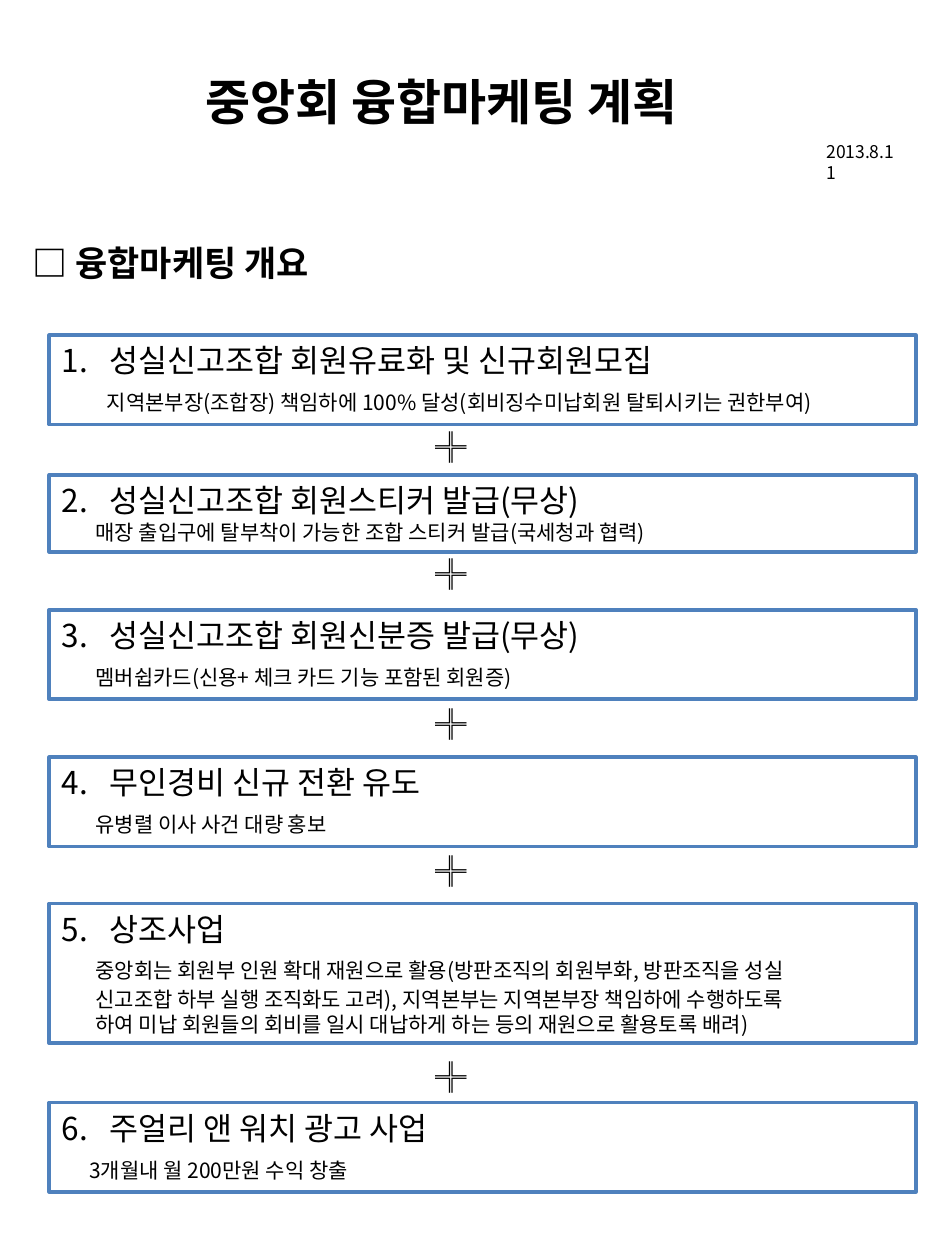
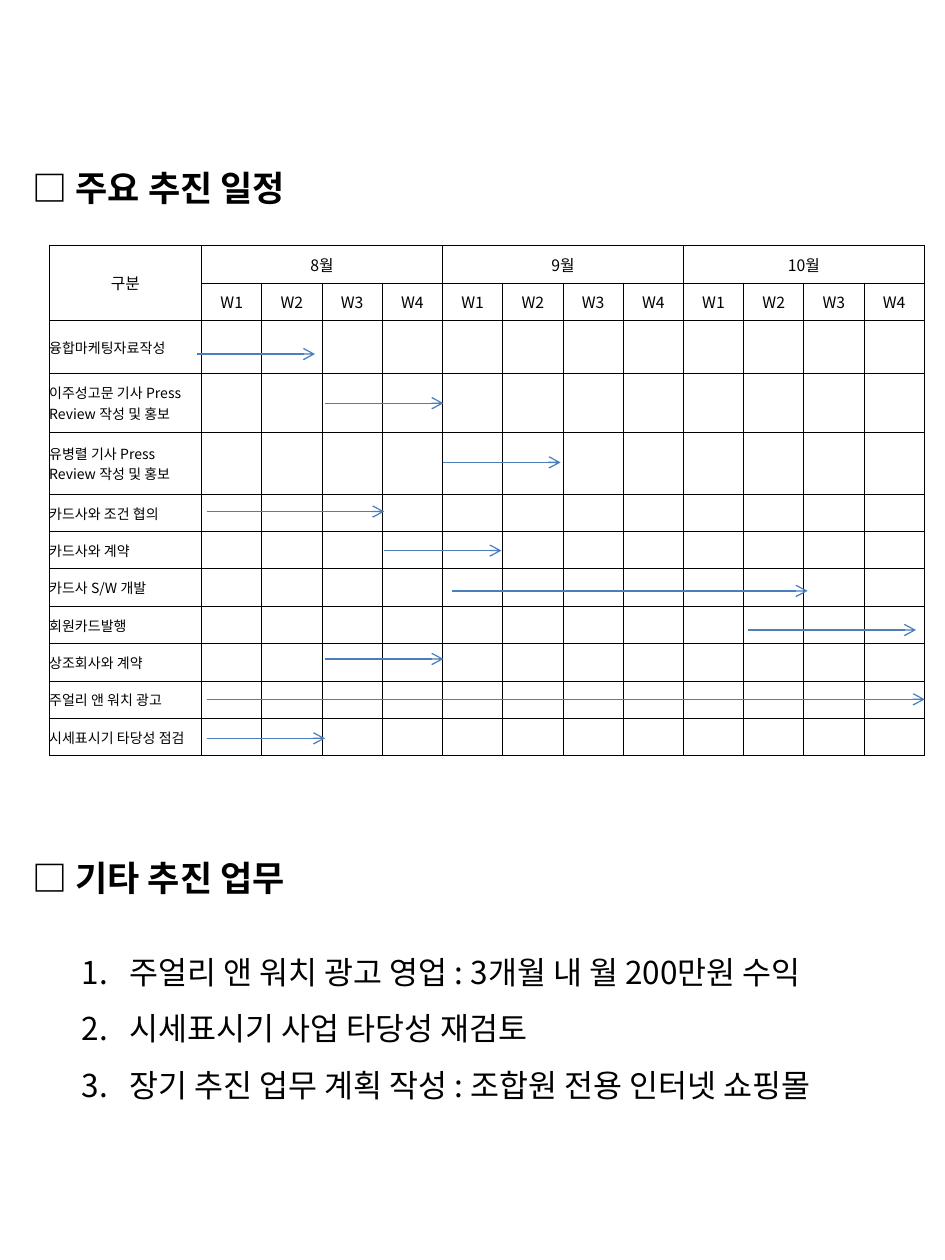
from dataclasses import dataclass

from lxml import etree
from pptx import Presentation
from pptx import util as u
from pptx.dml.color import RGBColor
from pptx.enum import shapes, text
from pptx.oxml.ns import qn


@dataclass(frozen=True)
class Theme:
    font: str = "Noto Sans CJK KR"
    ink: str = "000000"
    paper: str = "FFFFFF"
    frame: str = "4F81BD"
    arrow: str = "4B7EBC"
    title: int = 28
    heading: int = 20
    item: int = 18
    detail: int = 12
    date: int = 10
    table_head: int = 9
    table_body: int = 8


T = Theme()
HANG = 0.38

PLANS = [
    (2.66, 0.71, "성실신고조합 회원유료화 및 신규회원모집", 0.36, 6,
     ["지역본부장(조합장) 책임하에 100% 달성(회비징수미납회원 탈퇴시키는 권한부여)"]),
    (3.77, 0.61, "성실신고조합 회원스티커 발급(무상)", 0.27, 0,
     ["매장 출입구에 탈부착이 가능한 조합 스티커 발급(국세청과 협력)"]),
    (4.84, 0.71, "성실신고조합 회원신분증 발급(무상)", 0.27, 6,
     ["멤버쉽카드(신용+ 체크 카드 기능 포함된 회원증)"]),
    (6.01, 0.71, "무인경비 신규 전환 유도", 0.27, 6,
     ["유병렬 이사 사건 대량 홍보"]),
    (7.17, 1.11, "상조사업", 0.27, 6,
     ["중앙회는 회원부 인원 확대 재원으로 활용(방판조직의 회원부화, 방판조직을 성실",
      "신고조합 하부 실행 조직화도 고려), 지역본부는 지역본부장 책임하에 수행하도록",
      "하여 미납 회원들의 회비를 일시 대납하게 하는 등의 재원으로 활용토록 배려)"]),
    (8.75, 0.71, "주얼리 앤 워치 광고 사업", 0.22, 6,
     ["3개월내 월 200만원 수익 창출"]),
]
PLUS_TOPS = [3.35, 4.36, 5.55, 6.71, 8.35]

MONTHS = ["8월", "9월", "10월"]
WEEKS = ["W1", "W2", "W3", "W4"]
TASKS = [
    ("융합마케팅자료작성", 1.17, 2.11, 0.86),
    ("이주성고문 기사 Press Review 작성 및 홍보", 2.19, 3.13, 1.25),
    ("유병렬 기사 Press Review 작성 및 홍보", 3.13, 4.06, 1.72),
    ("카드사와 조건 협의", 1.25, 2.66, 2.11),
    ("카드사와 계약", 2.66, 3.59, 2.42),
    ("카드사 S/W 개발", 3.2, 6.02, 2.74),
    ("회원카드발행", 5.55, 6.88, 3.05),
    ("상조회사와 계약", 2.19, 3.13, 3.28),
    ("주얼리 앤 워치 광고", 1.25, 6.95, 3.6),
    ("시세표시기 타당성 점검", 1.25, 2.19, 3.91),
]
TALL_ROWS = {2: 0.42, 3: 0.47, 4: 0.49}
LABEL_WIDTH = 1.21

OTHER_WORK = [
    "주얼리 앤 워치 광고 영업 : 3개월 내 월 200만원 수익",
    "시세표시기 사업 타당성 재검토",
    "장기 추진 업무 계획 작성 : 조합원 전용 인터넷 쇼핑몰",
]


def rgb(value):
    return RGBColor.from_string(value)


def inches(box):
    return [u.Inches(v) for v in box]


def add_run(p, words, size, bold=False):
    r = p.add_run()
    r.text = words
    r.font.size = u.Pt(size)
    r.font.bold = bold
    r.font.color.rgb = rgb(T.ink)
    r.font.name = T.font
    etree.SubElement(r.font._element, qn("a:ea"), typeface=T.font)


def set_paragraph(p, left=0, hang=0, before=0, spacing=1.0, number=None):
    p.alignment = text.PP_ALIGN.LEFT
    p.line_spacing = spacing
    p.space_before = u.Pt(before)
    p.space_after = u.Pt(0)
    pPr = p._p.get_or_add_pPr()
    pPr.set("marL", str(u.Inches(left)))
    pPr.set("indent", str(u.Inches(-hang)))
    if number is None:
        etree.SubElement(pPr, qn("a:buNone"))
    else:
        etree.SubElement(pPr, qn("a:buFont"), typeface=T.font)
        etree.SubElement(pPr, qn("a:buAutoNum"), type="arabicPeriod", startAt=str(number))


def set_frame(sp):
    tf = sp.text_frame
    tf.word_wrap = True
    tf.auto_size = text.MSO_AUTO_SIZE.NONE
    tf.vertical_anchor = text.MSO_ANCHOR.TOP
    return tf


def place_text(s, box, words, size, bold=False, sp=None):
    if sp is None:
        sp = s.shapes.add_textbox(*inches(box))
    else:
        sp.left, sp.top, sp.width, sp.height = inches(box)
    p = set_frame(sp).paragraphs[0]
    set_paragraph(p)
    add_run(p, words, size, bold)


def plan_box(s, box, number, name, indent, gap, details):
    sp = s.shapes.add_shape(shapes.MSO_SHAPE.RECTANGLE, *inches(box))
    sp.shadow.inherit = False
    sp.fill.solid()
    sp.fill.fore_color.rgb = rgb(T.paper)
    sp.line.color.rgb = rgb(T.frame)
    sp.line.width = u.Pt(2)
    tf = set_frame(sp)
    p = tf.paragraphs[0]
    set_paragraph(p, HANG, HANG, number=number)
    add_run(p, name, T.item)
    for i, line in enumerate(details):
        p = tf.add_paragraph()
        set_paragraph(p, indent, before=(gap, 2, 0)[i])
        add_run(p, line, T.detail)


def numbered_list(sp, box, items):
    sp.left, sp.top, sp.width, sp.height = inches(box)
    tf = set_frame(sp)
    for i, item in enumerate(items):
        p = tf.add_paragraph() if i else tf.paragraphs[0]
        set_paragraph(p, HANG, HANG, spacing=1.5, number=1)
        add_run(p, item, T.item)


def set_cell(cell, words="", size=T.table_body, centered=False):
    cell.margin_left = cell.margin_right = cell.margin_top = cell.margin_bottom = 0
    cell.vertical_anchor = text.MSO_ANCHOR.MIDDLE
    p = cell.text_frame.paragraphs[0]
    p.alignment = text.PP_ALIGN.CENTER if centered else text.PP_ALIGN.LEFT
    add_run(p, words, size)
    cell.fill.background()
    tcPr = cell._tc.get_or_add_tcPr()
    for i, side in enumerate(("lnL", "lnR", "lnT", "lnB")):
        ln = etree.Element(qn("a:" + side), w=str(u.Pt(0.5)))
        fill = etree.SubElement(ln, qn("a:solidFill"))
        etree.SubElement(fill, qn("a:srgbClr"), val=T.ink)
        tcPr.insert(i, ln)


def schedule_words():
    span = len(WEEKS)
    grid = {(0, 0): "구분"}
    for m, month in enumerate(MONTHS):
        grid[0, 1 + m * span] = month
        for w, week in enumerate(WEEKS):
            grid[1, 1 + m * span + w] = week
    for i, task in enumerate(TASKS):
        grid[2 + i, 0] = task[0]
    return grid


def schedule_table(s, box):
    n_rows, n_cols = 2 + len(TASKS), 1 + len(MONTHS) * len(WEEKS)
    tbl = s.shapes.add_table(n_rows, n_cols, *inches(box)).table
    tbl.first_row = tbl.horz_banding = False
    week_width = (box[2] - LABEL_WIDTH) / (n_cols - 1)
    row_height = (box[3] - sum(TALL_ROWS.values())) / (n_rows - len(TALL_ROWS))
    for c, col in enumerate(tbl.columns):
        col.width = u.Inches(week_width if c else LABEL_WIDTH)
    for r, row in enumerate(tbl.rows):
        row.height = u.Inches(TALL_ROWS.get(r, row_height))
    grid = schedule_words()
    for r in range(n_rows):
        for c in range(n_cols):
            size = T.table_head if r < 2 else T.table_body
            set_cell(tbl.cell(r, c), grid.get((r, c), ""), size, r < 2)
    tbl.cell(0, 0).merge(tbl.cell(1, 0))
    for c in range(1, n_cols, len(WEEKS)):
        tbl.cell(0, c).merge(tbl.cell(0, c + len(WEEKS) - 1))


def schedule_arrows(s, box):
    left, top = box[:2]
    for _, start, end, y in TASKS:
        ends = inches((left + start, top + y, left + end, top + y))
        cx = s.shapes.add_connector(shapes.MSO_CONNECTOR.STRAIGHT, *ends)
        cx.line.color.rgb = rgb(T.arrow)
        cx.line.width = u.Pt(0.75)
        etree.SubElement(cx.line._get_or_add_ln(), qn("a:tailEnd"), type="arrow")
        etree.SubElement(cx._element.spPr, qn("a:effectLst"))


def heading(s, top, width, words, sp=None):
    place_text(s, (0.16, top, width, 0.44), "□ " + words, T.heading, True, sp)


def overview_slide(prs):
    s = prs.slides.add_slide(prs.slide_layouts[5])
    place_text(s, (1.53, 0.52, 4.41, 0.57), "중앙회 융합마케팅 계획", T.title, True, s.shapes.title)
    place_text(s, (6.46, 1.07, 0.81, 0.27), "2013.8.11", T.date)
    heading(s, 1.87, 2.6, "융합마케팅 개요")
    for number, (top, height, *content) in enumerate(PLANS, 1):
        plan_box(s, (0.39, top, 6.88, height), number, *content)
    for top in PLUS_TOPS:
        place_text(s, (3.36, top, 0.45, 0.4), "╬", T.item)


def schedule_slide(prs):
    s = prs.slides.add_slide(prs.slide_layouts[1])
    heading(s, 1.27, 2.37, "주요 추진 일정", s.shapes.title)
    heading(s, 6.75, 2.37, "기타 추진 업무")
    numbered_list(s.placeholders[1], (0.55, 7.36, 6.74, 1.46), OTHER_WORK)
    box = (0.39, 1.95, 6.95, 4.05)
    schedule_table(s, box)
    schedule_arrows(s, box)


def main():
    prs = Presentation()
    prs.slide_width, prs.slide_height = u.Inches(7.5), u.Inches(10)
    overview_slide(prs)
    schedule_slide(prs)
    prs.save("out.pptx")


if __name__ == "__main__":
    main()
